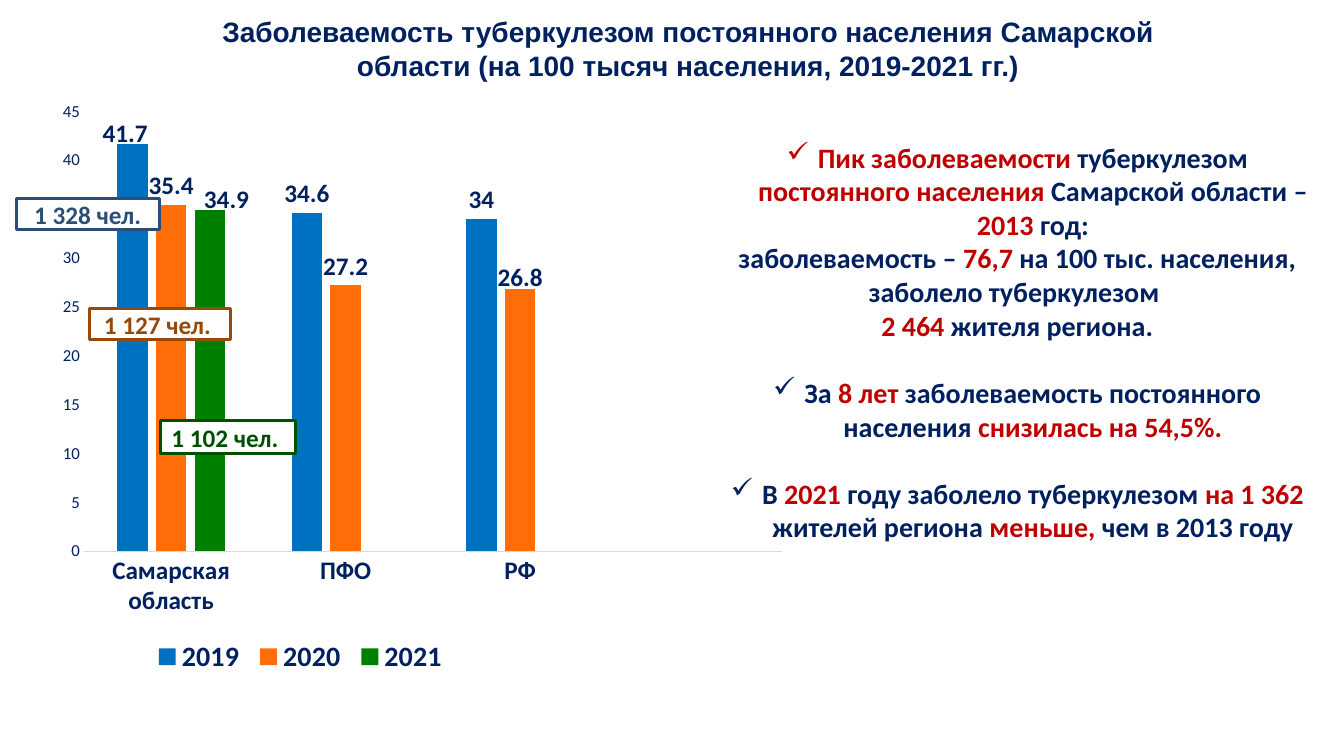
from lxml.etree import SubElement
from pptx import Presentation
from pptx.chart.data import CategoryChartData
from pptx.dml.color import RGBColor
from pptx.enum.chart import XL_CHART_TYPE, XL_LABEL_POSITION, XL_LEGEND_POSITION, XL_TICK_MARK
from pptx.enum.shapes import MSO_SHAPE
from pptx.enum.text import MSO_ANCHOR, PP_ALIGN
from pptx.oxml.ns import qn
from pptx.util import Inches, Pt

NAVY = RGBColor(0x00, 0x20, 0x60)
RED = RGBColor(0xC0, 0x00, 0x00)
WHITE = RGBColor(0xFF, 0xFF, 0xFF)
AXIS_GREY = RGBColor(0xD9, 0xD9, 0xD9)
BLUE = RGBColor(0x00, 0x70, 0xC0)
ORANGE = RGBColor(0xFF, 0x6D, 0x09)
GREEN = RGBColor(0x00, 0x80, 0x00)
DARK_BLUE = RGBColor(0x2C, 0x4D, 0x76)
BROWN = RGBColor(0x98, 0x48, 0x07)
DARK_GREEN = RGBColor(0x00, 0x50, 0x00)

TITLE = ("Заболеваемость туберкулезом постоянного населения Самарской области "
         "(на 100 тысяч населения, 2019-2021 гг.)")

# The last category is an empty place on the axis
CATEGORIES = ["Самарская область", "ПФО", "РФ", ""]
SERIES = [
    ("2019", BLUE, [41.7, 34.6, 34, None]),
    ("2020", ORANGE, [35.4, 27.2, 26.8, None]),
    ("2021", GREEN, [34.9, None, None, None]),
]
# (series, point): shift of the label as a share of the chart
LABEL_SHIFTS = {(0, 0): (-0.01, 0.015), (1, 2): (0, 0.012), (2, 0): (0.023, 0.015)}

# Each paragraph: bulleted, space before in points, runs
FACTS = [
    (True, 0, [("Пик заболеваемости", RED), (" туберкулезом ", NAVY),
               ("постоянного населения ", RED), ("Самарской области – ", NAVY),
               ("2013", RED), (" год:", NAVY)]),
    (False, 0, [("заболеваемость – ", NAVY), ("76,7", RED),
                (" на 100 тыс. населения, заболело туберкулезом ", NAVY)]),
    (False, 0, [("2 464 ", RED), ("жителя региона.", NAVY)]),
    (True, 24, [("За", NAVY), (" 8 лет ", RED),
                ("заболеваемость постоянного населения ", NAVY),
                ("снизилась на 54,5%.", RED)]),
    (True, 24, [("В ", NAVY), ("2021 ", RED), ("году заболело туберкулезом ", NAVY),
                ("на 1 362 ", RED), ("жителей региона ", NAVY), ("меньше, ", RED),
                ("чем в 2013 году", NAVY)]),
]

# Text, colour, left, top, width, height
PATIENT_COUNTS = [
    ("1 328 чел.", DARK_BLUE, 0.16, 1.97, 1.42, 0.31),
    ("1 127 чел. ", BROWN, 0.89, 3.06, 1.4, 0.31),
    ("1 102 чел. ", DARK_GREEN, 1.59, 4.17, 1.34, 0.33),
]


def style_font(font, size, color=NAVY, bold=True, name="Calibri"):
    font.size, font.bold, font.name = Pt(size), bold, name
    font.color.rgb = color


def add_span(para, text, size=20, **style):
    para.alignment = PP_ALIGN.CENTER
    span = para.add_run()
    span.text = text
    style_font(span.font, size, **style)


def add_text_box(slide, left, top, width, height, anchor):
    box = slide.shapes.add_textbox(Inches(left), Inches(top), Inches(width), Inches(height))
    frame = box.text_frame
    frame.word_wrap = True
    frame.vertical_anchor = anchor
    return frame


def add_check_mark(para):
    properties = para._p.get_or_add_pPr()
    indent = Inches(0.31)
    properties.set("marL", str(indent))
    properties.set("indent", str(-indent))
    SubElement(properties, qn("a:buChar"), char="✓")


def add_layout(parent, position, **values):
    """Put a manual layout into a chart element at the given child position."""
    layout = parent.find(qn("c:layout"))
    if layout is None:
        layout = SubElement(parent, qn("c:layout"))
    parent.remove(layout)
    parent.insert(position, layout)
    manual = SubElement(layout, qn("c:manualLayout"))
    for tag, value in values.items():
        SubElement(manual, qn("c:" + tag), val=str(value))


def add_chart(slide):
    data = CategoryChartData()
    data.categories = CATEGORIES
    for name, _, values in SERIES:
        data.add_series(name, values)
    chart = slide.shapes.add_chart(
        XL_CHART_TYPE.COLUMN_CLUSTERED,
        Inches(0.52), Inches(0.82), Inches(7.24), Inches(6.06), data).chart
    style_font(chart.font, 10, bold=False)
    chart.has_title = False
    add_layout(chart._chartSpace.chart.plotArea, 0, layoutTarget="inner",
               xMode="edge", yMode="edge", x=0.048, y=0.047, w=0.957, h=0.72)

    chart.has_legend = True
    legend = chart.legend
    legend.position = XL_LEGEND_POSITION.BOTTOM
    legend.include_in_layout = False
    style_font(legend.font, 20)
    add_layout(legend._element, 1, xMode="edge", yMode="edge", x=0.13, y=0.9, w=0.42, h=0.08)

    category_axis, value_axis = chart.category_axis, chart.value_axis
    for axis in (category_axis, value_axis):
        axis.major_tick_mark = axis.minor_tick_mark = XL_TICK_MARK.NONE
        axis.has_major_gridlines = False
    style_font(category_axis.tick_labels.font, 18)
    category_axis.format.line.color.rgb = AXIS_GREY
    category_axis.format.line.width = Pt(0.75)
    style_font(value_axis.tick_labels.font, 12, bold=False)
    value_axis.format.line.fill.background()
    value_axis.minimum_scale, value_axis.maximum_scale = 0, 45
    value_axis.major_unit = 5

    plot = chart.plots[0]
    plot.gap_width, plot.overlap, plot.vary_by_categories = 219, -27, False
    for series, (_, color, _) in zip(plot.series, SERIES):
        series.format.fill.solid()
        series.format.fill.fore_color.rgb = color
        labels = series.data_labels
        labels.show_value = True
        labels.position = XL_LABEL_POSITION.OUTSIDE_END
        style_font(labels.font, 18)
    for (series_index, point_index), (x, y) in LABEL_SHIFTS.items():
        label = plot.series[series_index].points[point_index].data_label
        style_font(label.font, 18)
        label.position = XL_LABEL_POSITION.OUTSIDE_END
        add_layout(label._get_or_add_dLbl(), 1, x=x, y=y)


def add_patient_count(slide, text, color, *place):
    box = slide.shapes.add_shape(MSO_SHAPE.RECTANGLE, *map(Inches, place))
    box.shadow.inherit = False
    box.fill.solid()
    box.fill.fore_color.rgb = WHITE
    box.line.color.rgb = color
    box.line.width = Pt(2)
    frame = box.text_frame
    frame.vertical_anchor = MSO_ANCHOR.MIDDLE
    add_span(frame.paragraphs[0], text, size=18, color=color)


def main():
    deck = Presentation()
    deck.slide_width, deck.slide_height = Inches(13.33), Inches(7.5)
    slide = deck.slides.add_slide(deck.slide_layouts[6])

    title = add_text_box(slide, 2.1, 0, 9.45, 1.23, MSO_ANCHOR.MIDDLE)
    title.margin_bottom = Inches(0.32)
    add_span(title.paragraphs[0], TITLE, name="Arial")

    add_chart(slide)

    facts = add_text_box(slide, 7.06, 1.15, 6.06, 5.32, MSO_ANCHOR.TOP)
    facts.margin_top = Inches(0.24)
    for index, (bulleted, space_before, spans) in enumerate(FACTS):
        para = facts.add_paragraph() if index else facts.paragraphs[0]
        para.space_before = Pt(space_before)
        if bulleted:
            add_check_mark(para)
        for text, color in spans:
            add_span(para, text, color=color)

    for count in PATIENT_COUNTS:
        add_patient_count(slide, *count)
    deck.save("out.pptx")


if __name__ == "__main__":
    main()
